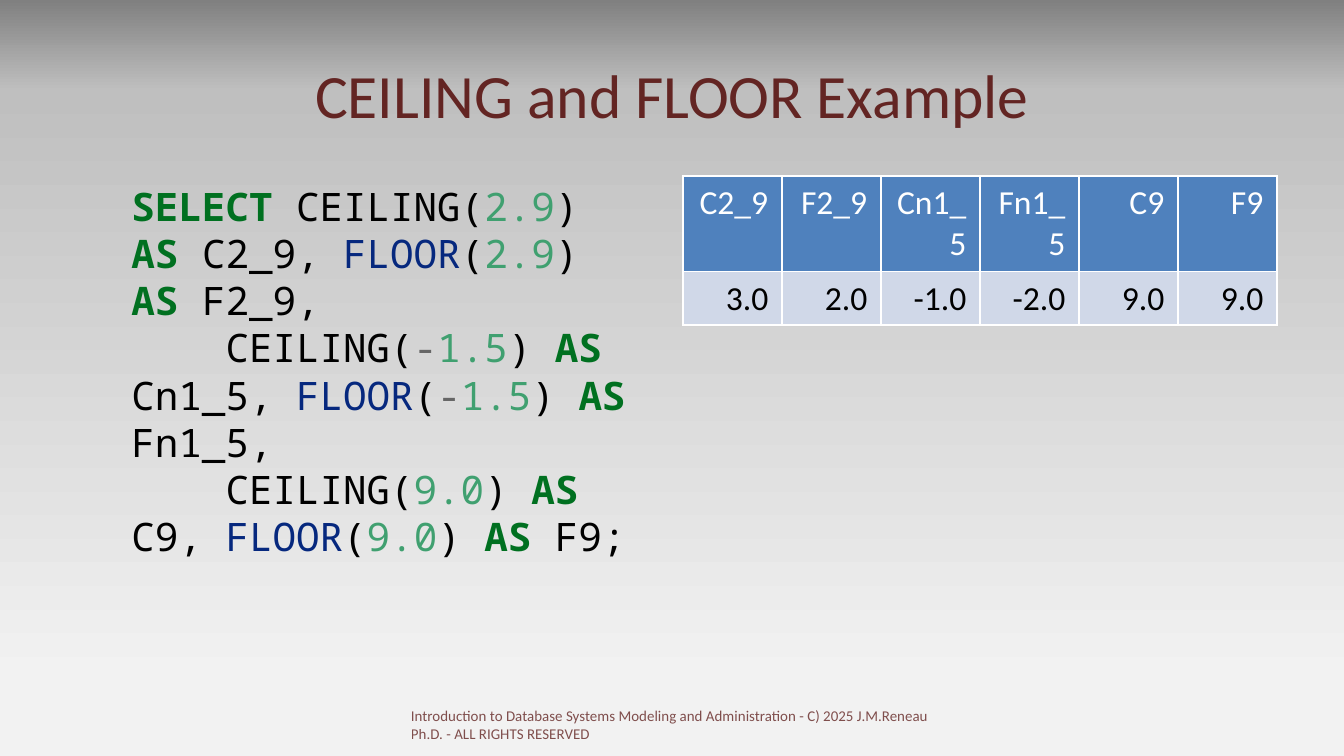
from copy import deepcopy
from pptx import Presentation, util as u
from pptx.dml.color import RGBColor
from pptx.enum import text
from pptx.oxml import parse_xml
from pptx.oxml.ns import nsdecls, qn

# Colours
BLACK, WHITE = RGBColor(0, 0, 0), RGBColor(255, 255, 255)
MAROON = RGBColor(0x63, 0x25, 0x23)
GREEN, TEAL = RGBColor(0, 0x70, 0x20), RGBColor(0x40, 0xA0, 0x70)
NAVY, GRAY = RGBColor(0x06, 0x28, 0x7E), RGBColor(0x66, 0x66, 0x66)
BLUE, PALE = RGBColor(0x4F, 0x81, 0xBD), RGBColor(0xD0, 0xD8, 0xE8)
STOPS = [(0, RGBColor(0x80, 0x80, 0x80)), (0.12, RGBColor(0xBF, 0xBF, 0xBF)),
         (0.9, RGBColor(0xF2, 0xF2, 0xF2))]

# Content
TITLE = "CEILING and FLOOR Example"
FOOTER = ("Introduction to Database Systems Modeling and Administration"
          " - C) 2025 J.M.Reneau Ph.D. - ALL RIGHTS RESERVED")
KEY, NUM, FUNC, SIGN, PLAIN = (GREEN, True), (TEAL, False), (NAVY, False), (GRAY, False), (BLACK, False)
CODE = [
    [("SELECT", KEY), (" CEILING(", PLAIN), ("2.9", NUM), (") ", PLAIN), ("AS", KEY),
     (" C2_9, ", PLAIN), ("FLOOR", FUNC), ("(", PLAIN), ("2.9", NUM), (") ", PLAIN),
     ("AS", KEY), (" F2_9,", PLAIN)],
    [("CEILING(", PLAIN), ("-", SIGN), ("1.5", NUM), (") ", PLAIN), ("AS", KEY),
     (" Cn1_5, ", PLAIN), ("FLOOR", FUNC), ("(", PLAIN), ("-", SIGN), ("1.5", NUM),
     (") ", PLAIN), ("AS", KEY), (" Fn1_5,", PLAIN)],
    [("CEILING(", PLAIN), ("9.0", NUM), (") ", PLAIN), ("AS", KEY), (" C9, ", PLAIN),
     ("FLOOR", FUNC), ("(", PLAIN), ("9.0", NUM), (") ", PLAIN), ("AS", KEY), (" F9;", PLAIN)],
]
ROWS = [["C2_9", "F2_9", "Cn1_5", "Fn1_5", "C9", "F9"],
        ["3.0", "2.0", "-1.0", "-2.0", "9.0", "9.0"]]
STYLES = [(BLUE, WHITE, 0.71), (PALE, BLACK, 0.4)]  # fill, font colour, height


def style(run, size, color, font="Calibri", bold=False):
    run.font.size, run.font.name, run.font.bold = u.Pt(size), font, bold
    run.font.color.rgb = color


def add_box(*place):
    frame = slide.shapes.add_textbox(*map(u.Inches, place)).text_frame
    frame.word_wrap = True
    return frame


def add_edges(cell):
    props = cell._tc.get_or_add_tcPr()
    for i, side in enumerate(("lnL", "lnR", "lnT", "lnB")):
        props.insert(i, parse_xml(
            f'<a:{side} {nsdecls("a")} w="12700"><a:solidFill>'
            f'<a:srgbClr val="{WHITE}"/></a:solidFill></a:{side}>'))


# Slide in 16:9 format
deck = Presentation()
deck.slide_width = u.Inches(10)
deck.slide_height = deck.slide_width * 9 // 16
slide = deck.slides.add_slide(deck.slide_layouts[6])

# Background gradient, top to bottom
fill = slide.background.fill
fill.gradient()
fill.gradient_angle = 270
last = fill.gradient_stops[-1]._gs
last.addnext(deepcopy(last))
for stop, (pos, color) in zip(fill.gradient_stops, STOPS):
    stop.position, stop.color.rgb = pos, color

# Title
frame = add_box(0.5, 0.23, 9, 0.94)
frame.vertical_anchor = text.MSO_ANCHOR.MIDDLE
frame.text = TITLE
frame.paragraphs[0].alignment = text.PP_ALIGN.CENTER
style(frame.paragraphs[0].runs[0], 33, MAROON)

# Query, with later lines indented by four characters
frame = add_box(0.5, 1.31, 4.42, 3.71)
for i, line in enumerate(CODE):
    par = frame.add_paragraph() if i else frame.paragraphs[0]
    par.line_spacing = u.Pt(25.2)
    props = par._p.get_or_add_pPr()
    props.set("marL", str(u.Inches(0.38)))
    props.set("indent", str(u.Inches(0.7 if i else 0)))
    for word, (color, bold) in line:
        run = par.add_run()
        run.text = word
        style(run, 21, color, "Noto Sans Mono", bold)

# Result table
high = sum(s[2] for s in STYLES)
table = slide.shapes.add_table(len(ROWS), len(ROWS[0]), *map(u.Inches, (5.08, 1.31, 4.42, high))).table
for r, (row, (back, ink, tall)) in enumerate(zip(ROWS, STYLES)):
    table.rows[r].height = u.Inches(tall)
    for c, value in enumerate(row):
        cell = table.cell(r, c)
        cell.text = value
        cell.fill.solid()
        cell.fill.fore_color.rgb = back
        add_edges(cell)
        par = cell.text_frame.paragraphs[0]
        par.alignment = text.PP_ALIGN.RIGHT
        style(par.runs[0], 18, ink)

# Footer, slightly transparent
frame = add_box(2.96, 5.21, 4.06, 0.3)
frame.text = FOOTER
run = frame.paragraphs[0].runs[0]
style(run, 8, MAROON)
tint = run._r.find(".//" + qn("a:srgbClr"))
tint.append(parse_xml(f'<a:alpha {nsdecls("a")} val="80000"/>'))

deck.save("out.pptx")
